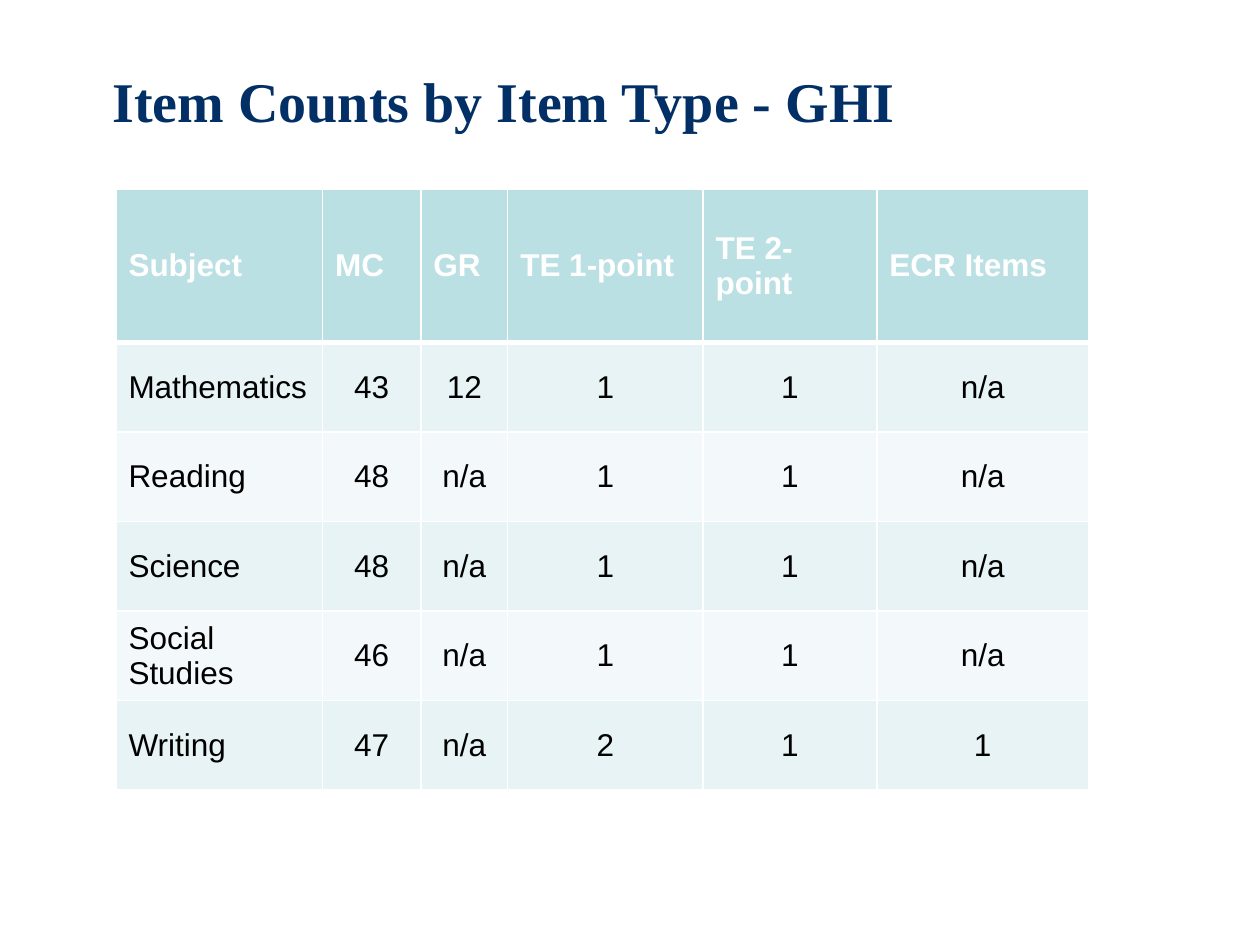
from dataclasses import dataclass

from lxml.etree import SubElement
from pptx import Presentation
from pptx.dml.color import RGBColor
from pptx.enum.text import MSO_ANCHOR, PP_ALIGN
from pptx.oxml.ns import qn
from pptx.util import Inches, Pt

WHITE = "FFFFFF"
HEADER_FILL = "BBE0E3"
BAND_FILLS = ("E7F3F4", "F3F9FA")
COLUMN_WIDTHS = (1.64, 0.78, 0.69, 1.55, 1.38, 1.68)
HEADER_HEIGHT, BODY_HEIGHT = 1.22, 0.71
HEADINGS = ("Subject", "MC", "GR", "TE 1-point", "TE 2-point", "ECR Items")


@dataclass
class SubjectCounts:
    subject: str
    mc: str
    gr: str
    te_one: str
    te_two: str
    ecr: str

    def values(self) -> tuple:
        return (self.subject, self.mc, self.gr, self.te_one, self.te_two, self.ecr)


SUBJECTS = (
    SubjectCounts("Mathematics", "43", "12", "1", "1", "n/a"),
    SubjectCounts("Reading", "48", "n/a", "1", "1", "n/a"),
    SubjectCounts("Science", "48", "n/a", "1", "1", "n/a"),
    SubjectCounts("Social Studies", "46", "n/a", "1", "1", "n/a"),
    SubjectCounts("Writing", "47", "n/a", "2", "1", "1"),
)


def color(value: str) -> RGBColor:
    return RGBColor.from_string(value)


def style_text(paragraph, font_name: str, size: int, ink: str, bold: bool,
               centered: bool) -> None:
    paragraph.alignment = PP_ALIGN.CENTER if centered else PP_ALIGN.LEFT
    for run in paragraph.runs:
        run.font.name = font_name
        run.font.size = Pt(size)
        run.font.bold = bold
        run.font.color.rgb = color(ink)


def add_border(cell, side: str, width: int) -> None:
    line = SubElement(cell._tc.get_or_add_tcPr(), qn(f"a:{side}"), w=str(Pt(width)))
    SubElement(SubElement(line, qn("a:solidFill")), qn("a:srgbClr"), val=WHITE)


def fill_cell(cell, text: str, row: int, column: int) -> None:
    is_header = row == 0
    cell.text_frame.text = text
    cell.vertical_anchor = MSO_ANCHOR.MIDDLE
    style_text(cell.text_frame.paragraphs[0], "Arial", 18,
               WHITE if is_header else "000000", is_header,
               not is_header and column > 0)
    # Borders come before the fill in the cell properties
    for side in ("lnL", "lnR", "lnT", "lnB"):
        heavy = (row, side) in ((0, "lnB"), (1, "lnT"))
        add_border(cell, side, 3 if heavy else 1)
    cell.fill.solid()
    cell.fill.fore_color.rgb = color(
        HEADER_FILL if is_header else BAND_FILLS[(row - 1) % 2])


def add_title(slide) -> None:
    title = slide.shapes.add_textbox(Inches(-1), Inches(0.45), Inches(10), Inches(1.08))
    frame = title.text_frame
    frame.word_wrap = True
    frame.margin_top = Inches(0.08)
    frame.text = "Item Counts by Item Type - GHI"
    style_text(frame.paragraphs[0], "Times New Roman", 32, "022F65", True, True)


def add_counts_table(slide) -> None:
    rows = [HEADINGS] + [counts.values() for counts in SUBJECTS]
    heights = [HEADER_HEIGHT] + [BODY_HEIGHT] * len(SUBJECTS)
    counts_table = slide.shapes.add_table(
        len(rows), len(HEADINGS), Inches(0.92), Inches(1.5),
        Inches(sum(COLUMN_WIDTHS)), Inches(sum(heights))).table
    for column, width in zip(counts_table.columns, COLUMN_WIDTHS):
        column.width = Inches(width)
    for row, height in zip(counts_table.rows, heights):
        row.height = Inches(height)
    for row_index, texts in enumerate(rows):
        for column_index, text in enumerate(texts):
            fill_cell(counts_table.cell(row_index, column_index), text,
                      row_index, column_index)


def main() -> None:
    presentation = Presentation()
    presentation.slide_width = Inches(10)
    presentation.slide_height = Inches(7.5)
    slide = presentation.slides.add_slide(presentation.slide_layouts[6])
    slide.background.fill.solid()
    slide.background.fill.fore_color.rgb = color(WHITE)
    add_title(slide)
    add_counts_table(slide)
    presentation.save("out.pptx")


if __name__ == "__main__":
    main()
